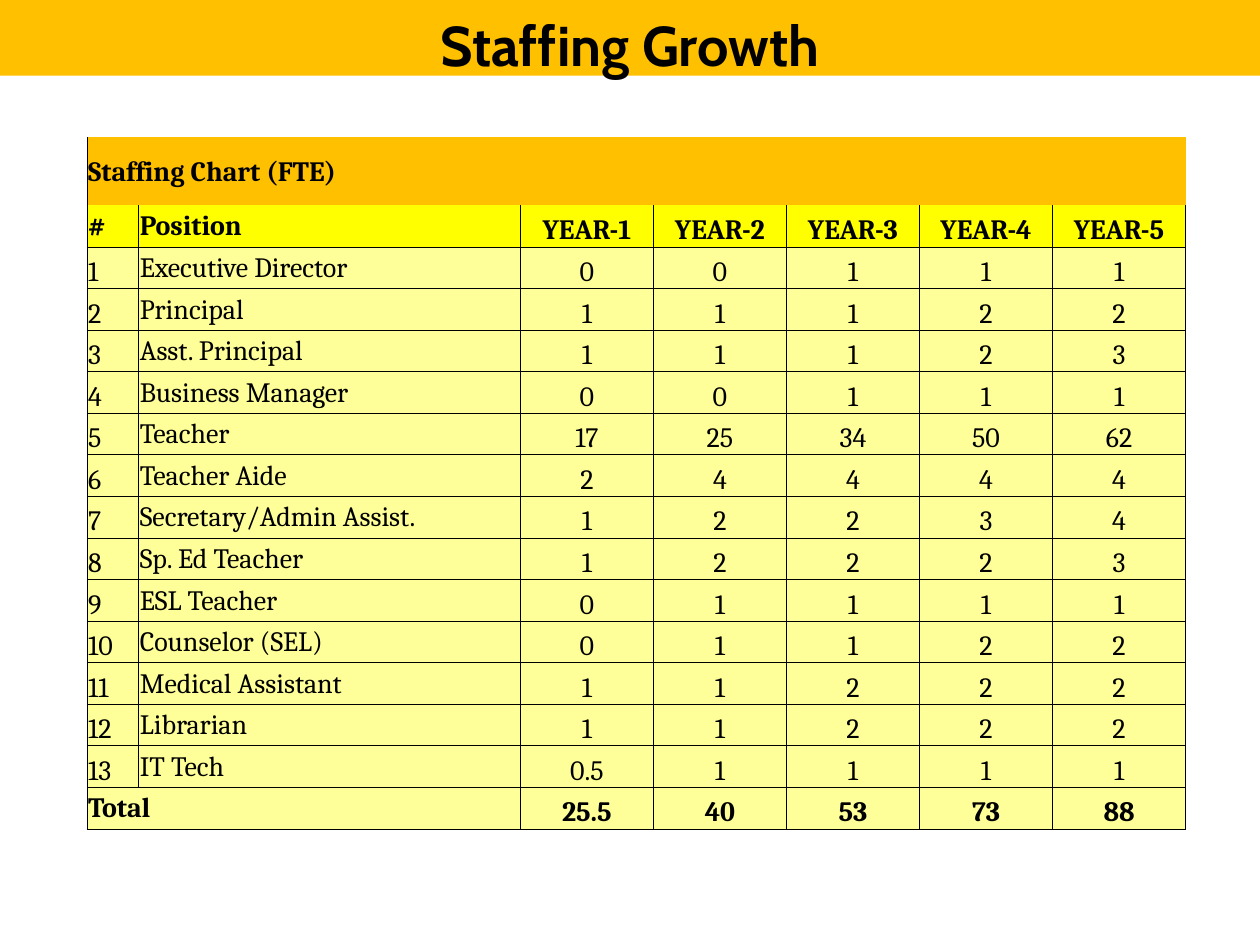
from lxml.etree import SubElement
from pptx import Presentation
from pptx.dml.color import RGBColor
from pptx.enum.text import MSO_ANCHOR as Anchor, MSO_AUTO_SIZE as AutoSize, PP_ALIGN as Align
from pptx.oxml.ns import qn
from pptx.util import Inches, Pt

GOLD, YELLOW, PALE, BLACK = "FFC000", "FFFF00", "FFFF99", "000000"
TITLE_BOX = (0, 0, 10, 0.6)
TABLE_BOX = (0.69, 1.09, 8.72, 5.49)
NUMBER_WIDTH, POSITION_WIDTH = 0.41, 3.03
BANNER_HEIGHT = 0.54
POSITIONS = [
    ("Executive Director", "0 0 1 1 1"),
    ("Principal", "1 1 1 2 2"),
    ("Asst. Principal", "1 1 1 2 3"),
    ("Business Manager", "0 0 1 1 1"),
    ("Teacher", "17 25 34 50 62"),
    ("Teacher Aide", "2 4 4 4 4"),
    ("Secretary/Admin Assist.", "1 2 2 3 4"),
    ("Sp. Ed Teacher", "1 2 2 2 3"),
    ("ESL Teacher", "0 1 1 1 1"),
    ("Counselor (SEL)", "0 1 1 2 2"),
    ("Medical Assistant", "1 1 2 2 2"),
    ("Librarian", "1 1 2 2 2"),
    ("IT Tech", "0.5 1 1 1 1"),
]
TOTALS = "25.5 40 53 73 88"


def paint(fill, colour):
    fill.solid()
    fill.fore_color.rgb = RGBColor.from_string(colour)


def set_all(item, values):
    for name, value in values.items():
        setattr(item, name, value)


def write(frame, text, align, font):
    para = frame.paragraphs[0]
    para.alignment = align
    span = para.add_run()
    span.text = text
    set_all(span.font, font)
    span.font.color.rgb = RGBColor.from_string(BLACK)


def set_borders(cell, drawn):
    properties = cell._tc.get_or_add_tcPr()
    for side in "LRTB":
        line = SubElement(properties, qn(f"a:ln{side}"), w=str(Pt(0.5)))
        if side in drawn:
            solid = SubElement(line, qn("a:solidFill"))
            SubElement(solid, qn("a:srgbClr"), val=BLACK)
        else:
            SubElement(line, qn("a:noFill"))


def add_title(page, box):
    title = page.shapes.title
    set_all(title, dict(zip(("left", "top", "width", "height"), map(Inches, box))))
    paint(title.fill, GOLD)
    set_all(title.text_frame, {
        "auto_size": AutoSize.NONE, "vertical_anchor": Anchor.TOP,
        "margin_top": Inches(0.08), "margin_bottom": 0, "word_wrap": True,
    })
    write(title.text_frame, "Staffing Growth", Align.CENTER,
          {"name": "Cabin", "size": Pt(32), "bold": True})


def staffing_rows():
    years = [f"YEAR-{year}" for year in range(1, 6)]
    rows = [["Staffing Chart (FTE)"] + [""] * 6, ["#", "Position"] + years]
    for number, (position, counts) in enumerate(POSITIONS, 1):
        rows.append([str(number), position] + counts.split())
    return rows + [["Total", ""] + TOTALS.split()]


def format_cell(cell, text, row, column, last):
    if row == 0:
        colour, drawn = GOLD, "L" if column == 0 else ""
    elif row == 1:
        colour, drawn = YELLOW, "LRB"
    else:
        colour, drawn = PALE, "LRTB"
    set_borders(cell, drawn)
    paint(cell.fill, colour)
    bold = row in (0, 1, last)
    centred = column > 1
    low = centred or (column == 0 and not bold)
    set_all(cell, {
        "margin_left": Inches(0.01), "margin_right": Inches(0.01),
        "margin_top": Inches(0.01), "margin_bottom": 0,
        "vertical_anchor": Anchor.BOTTOM if low else Anchor.MIDDLE,
    })
    if text:
        write(cell.text_frame, text, Align.CENTER if centred else Align.LEFT,
              {"name": "Cambria", "size": Pt(16), "bold": bold})


def add_staffing_table(page, box):
    rows = staffing_rows()
    last, columns = len(rows) - 1, len(rows[0])
    table = page.shapes.add_table(len(rows), columns, *map(Inches, box)).table
    set_all(table, {"first_row": False, "horz_banding": False})
    year_width = (box[2] - NUMBER_WIDTH - POSITION_WIDTH) / (columns - 2)
    widths = [NUMBER_WIDTH, POSITION_WIDTH] + [year_width] * (columns - 2)
    heights = [BANNER_HEIGHT] + [(box[3] - BANNER_HEIGHT) / last] * last
    for column, width in zip(table.columns, widths):
        column.width = Inches(width)
    for row, height in zip(table.rows, heights):
        row.height = Inches(height)
    for row, texts in enumerate(rows):
        for column, text in enumerate(texts):
            format_cell(table.cell(row, column), text, row, column, last)
    table.cell(0, 0).merge(table.cell(0, columns - 1))
    table.cell(last, 0).merge(table.cell(last, 1))


def main():
    deck = Presentation()
    set_all(deck, {"slide_width": Inches(10), "slide_height": Inches(7.5)})
    page = deck.slides.add_slide(deck.slide_layouts[5])
    add_title(page, TITLE_BOX)
    add_staffing_table(page, TABLE_BOX)
    deck.save("out.pptx")


if __name__ == "__main__":
    main()
